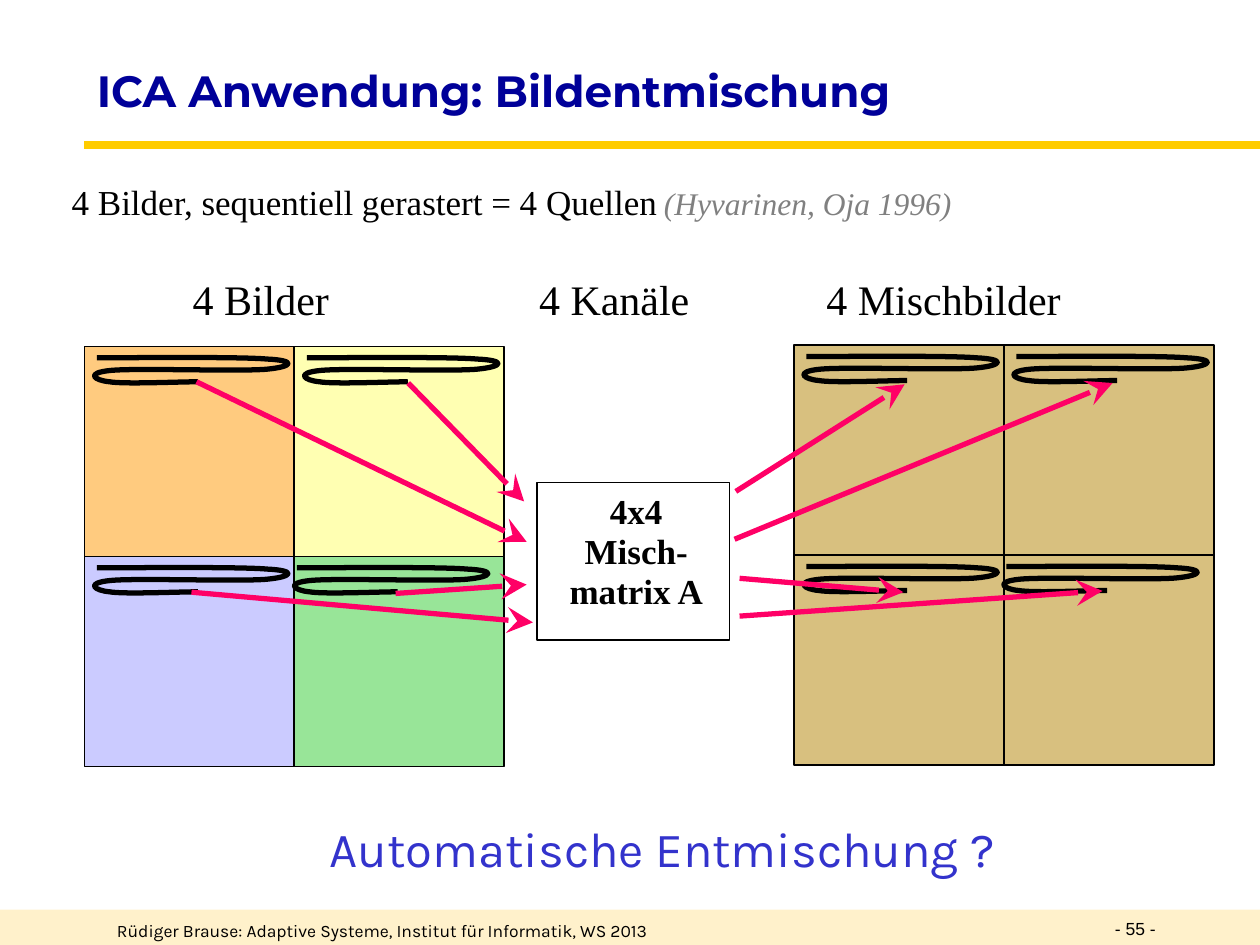
"""Build the slide on unmixing images with ICA."""
from dataclasses import dataclass

import lxml.etree
import pptx
import pptx.dml.color
import pptx.enum.shapes
import pptx.enum.text
import pptx.oxml.ns
import pptx.util

Inches = pptx.util.Inches
Color = pptx.dml.color.RGBColor
Align = pptx.enum.text.PP_ALIGN
Anchor = pptx.enum.text.MSO_ANCHOR
qn = pptx.oxml.ns.qn

BLACK = Color(0, 0, 0)
WHITE = Color(255, 255, 255)
NAVY = Color(0, 0, 0x99)
BLUE = Color(0x33, 0x33, 0xCC)
GRAY = Color(0x80, 0x80, 0x80)
PINK = Color(0xFF, 0, 0x66)
GOLD = Color(0xFF, 0xCC, 0)
CREAM = Color(0xFF, 0xE4, 0x99)
ORANGE = Color(0xFF, 0x99, 0)
YELLOW = Color(0xFF, 0xFF, 0x66)
LILAC = Color(0x99, 0x99, 0xFF)
GREEN = Color(0x33, 0xCC, 0x33)
BROWN = Color(0xB2, 0x83, 0)

SERIF = "Times New Roman"
SIDE = 5 / 3
CURVE = (
    (0.1, 0.09),
    (0.33, 0.09), (1.23, 0.08), (1.45, 0.1),
    (1.68, 0.11), (1.66, 0.16), (1.45, 0.18),
    (1.24, 0.2), (0.42, 0.17), (0.21, 0.19),
    (0, 0.21), (0.08, 0.27), (0.2, 0.28),
    (0.31, 0.3), (0.75, 0.28), (0.9, 0.28),
)


@dataclass
class Run:
    text: str
    size: float
    font: str
    color: Color = BLACK
    bold: bool = False
    slant: bool = False


@dataclass
class Label:
    box: tuple
    paras: list
    align: Align = Align.LEFT
    anchor: Anchor = Anchor.TOP
    tabs: tuple = ()
    space: float = 1.0


@dataclass
class Grid:
    left: float
    top: float
    fills: tuple


@dataclass
class Arrow:
    start: tuple
    end: tuple


GRIDS = (
    Grid(0.67, 2.75, (ORANGE, YELLOW, LILAC, GREEN)),
    Grid(6.3, 2.74, (BROWN,) * 4),
)
ARROWS = (
    Arrow((1.56, 3.03), (4.18, 4.3)),
    Arrow((3.24, 3.04), (4.16, 3.98)),
    Arrow((1.52, 4.7), (4.23, 4.94)),
    Arrow((3.14, 4.71), (4.18, 4.64)),
    Arrow((5.83, 4.28), (8.83, 3.04)),
    Arrow((5.84, 3.9), (7.18, 3.05)),
    Arrow((5.87, 4.89), (8.75, 4.69)),
    Arrow((5.87, 4.59), (7.17, 4.7)),
)
LABELS = (
    Label((0.83, 7.25, 5.42, 0.25), [[Run(
        "Rüdiger Brause: Adaptive Systeme, Institut für Informatik, WS 2013", 10, "Karla")]]),
    Label((8.75, 7.24, 0.75, 0.26), [[Run("- 55 -", 10, "Arial")]]),
    Label((0.67, 0.44, 7.24, 0.55), [[Run(
        "ICA Anwendung: Bildentmischung", 25, "Montserrat", NAVY, bold=True)]],
        anchor=Anchor.MIDDLE),
    Label((0.47, 1.38, 9.02, 0.43), [[
        Run("4 Bilder, sequentiell gerastert = 4 Quellen", 20, SERIF),
        Run("\t", 18, SERIF),
        Run("(Hyvarinen, Oja 1996)", 18, SERIF, GRAY, slant=True)]], tabs=(4.7,)),
    Label((1.43, 2.12, 7.57, 0.5), [[Run(
        "4 Bilder\t4 Kanäle\t4 Mischbilder", 24, SERIF)]], tabs=(2.75, 5.03)),
    Label((4.17, 3.86, 1.76, 1.05), [
        [Run("4x4", 20, SERIF, bold=True)],
        [Run("Misch-matrix A", 20, SERIF, bold=True)]], Align.CENTER, space=0.95),
    Label((1, 6.45, 8.51, 0.57), [[Run(
        "Automatische Entmischung ?", 28, "Karla", BLUE)]], Align.CENTER),
)


def rect(shapes, box: tuple, color: Color, edge: bool = True) -> None:
    kind = pptx.enum.shapes.MSO_SHAPE.RECTANGLE
    shape = shapes.add_shape(kind, *map(Inches, box))
    shape.shadow.inherit = False
    shape.fill.solid()
    shape.fill.fore_color.rgb = color
    tint = shape.fill._xPr.find(qn("a:solidFill"))[0]
    lxml.etree.SubElement(tint, qn("a:alpha"), val="50000")
    if edge:
        shape.line.color.rgb = BLACK
        shape.line.width = pptx.util.Pt(1)
    else:
        shape.line.fill.background()


def line(shapes, start: tuple, end: tuple, color: Color, width: float, head: bool) -> None:
    kind = pptx.enum.shapes.MSO_CONNECTOR.STRAIGHT
    link = shapes.add_connector(kind, *map(Inches, start + end))
    link.line.color.rgb = color
    link.line.width = pptx.util.Pt(width)
    if head:
        lxml.etree.SubElement(link.line._get_or_add_ln(), qn("a:tailEnd"),
                              type="stealth", w="lg", len="lg")
    lxml.etree.SubElement(link._element.spPr, qn("a:effectLst"))


def bend(shape) -> None:
    """Turn each three straight segments into one cubic curve."""
    track = next(shape._element.iter(qn("a:path")))
    legs = track.findall(qn("a:lnTo"))
    for i in range(0, len(legs), 3):
        cubic = lxml.etree.SubElement(track, qn("a:cubicBezTo"))
        for leg in legs[i:i + 3]:
            cubic.append(leg[0])
            track.remove(leg)


def scan(shapes, left: float, top: float) -> None:
    first, *rest = [(Inches(left + x), Inches(top + y)) for x, y in CURVE]
    pen = shapes.build_freeform(*first)
    pen.add_line_segments(rest, close=False)
    shape = pen.convert_to_shape()
    bend(shape)
    shape.shadow.inherit = False
    shape.fill.background()
    shape.line.color.rgb = BLACK
    shape.line.width = pptx.util.Pt(3)


def grid(shapes, item: Grid) -> None:
    cells = [(item.left + i % 2 * SIDE, item.top + i // 2 * SIDE) for i in range(4)]
    for (left, top), color in zip(cells, item.fills):
        rect(shapes, (left, top, SIDE, SIDE), color)
    for (left, top), shift in zip(cells, (0, 0, 0, -0.08)):
        scan(shapes, left + shift, top)


def write(shapes, label: Label) -> None:
    frame = shapes.add_textbox(*map(Inches, label.box)).text_frame
    frame.word_wrap = True
    frame.vertical_anchor = label.anchor
    for i, runs in enumerate(label.paras):
        para = frame.add_paragraph() if i else frame.paragraphs[0]
        para.alignment = label.align
        para.line_spacing = label.space
        if label.tabs:
            stops = lxml.etree.SubElement(para._p.get_or_add_pPr(), qn("a:tabLst"))
            for stop in label.tabs:
                lxml.etree.SubElement(stops, qn("a:tab"), pos=str(Inches(stop)), algn="l")
        for item in runs:
            run = para.add_run()
            run.text = item.text
            run.font.size = pptx.util.Pt(item.size)
            run.font.name = item.font
            run.font.color.rgb = item.color
            run.font.bold = item.bold
            run.font.italic = item.slant


def main() -> None:
    deck = pptx.Presentation()
    deck.slide_width, deck.slide_height = Inches(10), Inches(7.5)
    shapes = deck.slides.add_slide(deck.slide_layouts[6]).shapes
    rect(shapes, (0, 7.22, 10, 0.28), CREAM, edge=False)
    line(shapes, (0.67, 1.15), (10, 1.15), GOLD, 4.5, head=False)
    for item in GRIDS:
        grid(shapes, item)
    rect(shapes, (4.26, 3.83, 1.53, 1.25), WHITE)
    for arrow in ARROWS:
        line(shapes, arrow.start, arrow.end, PINK, 3, head=True)
    for label in LABELS:
        write(shapes, label)
    deck.save("out.pptx")


if __name__ == "__main__":
    main()
